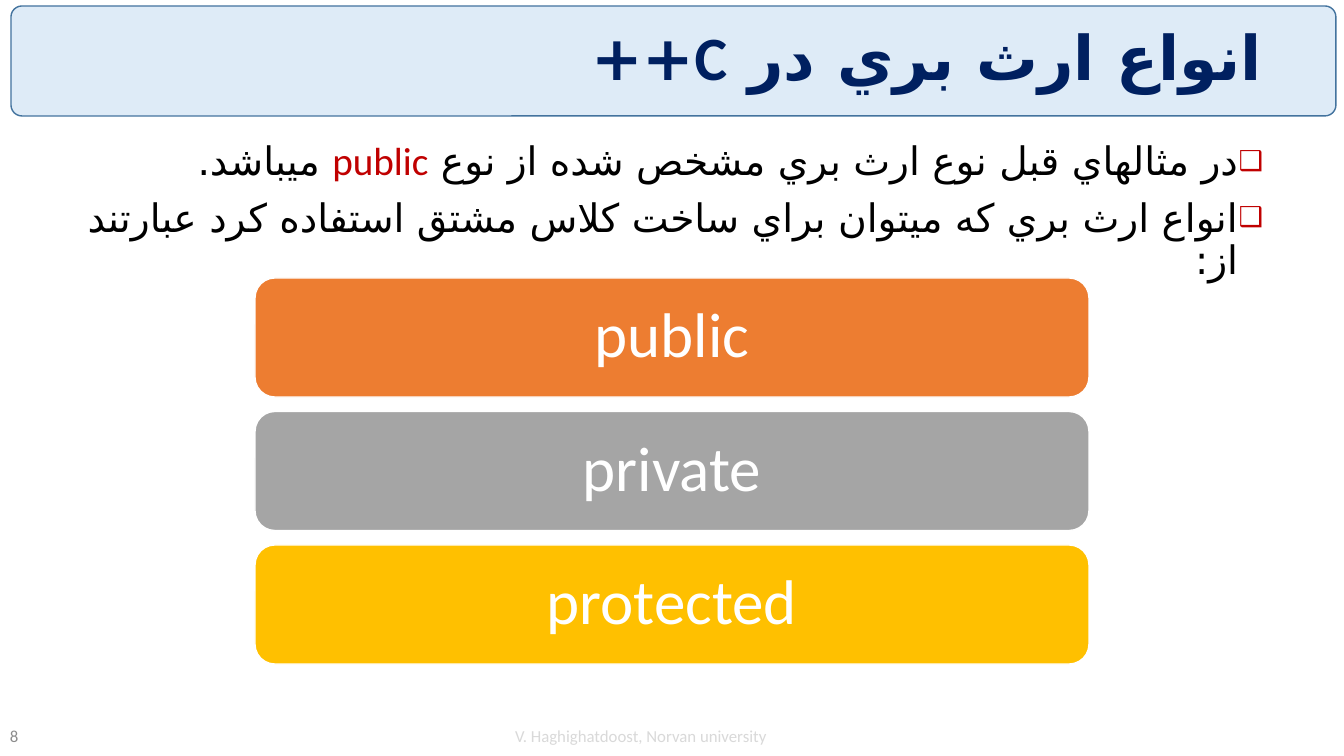
from lxml import etree
from pptx import Presentation
from pptx.dml.color import RGBColor
from pptx.enum.shapes import MSO_SHAPE
from pptx.enum.text import MSO_ANCHOR, MSO_AUTO_SIZE, PP_ALIGN
from pptx.oxml.ns import qn
from pptx.util import Pt

EMU_PER_PX = 914400 / 100.8
ROUNDED = MSO_SHAPE.ROUNDED_RECTANGLE
MIDDLE = MSO_ANCHOR.MIDDLE
TOP = MSO_ANCHOR.TOP
NO_AUTOFIT = MSO_AUTO_SIZE.NONE
LEFT, CENTER, RIGHT = PP_ALIGN.LEFT, PP_ALIGN.CENTER, PP_ALIGN.RIGHT
TITLE_ONLY = 5
FONT = "Calibri"
PERSIAN_FONT = "DejaVu Sans"
COLORS = {
    "banner": "DEEBF7",
    "banner_line": "43739E",
    "title": "002060",
    "body": "000000",
    "accent": "C00000",
    "white": "FFFFFF",
    "public": "ED7D31",
    "private": "A5A5A5",
    "protected": "FFC000",
    "footer": "D9D9D9",
    "number": "8C8C8C",
}
INTRO = [
    [
        ("در مثالهاي قبل نوع ارث بري مشخص شده از نوع ", "body"),
        ("public ", "accent"),
        ("ميباشد.", "body"),
    ],
    [("انواع ارث بري كه ميتوان براي ساخت كلاس مشتق استفاده كرد عبارتند از:", "body")],
]
ACCESS_KINDS = ["public", "private", "protected"]


def px(length):
    return round(length * EMU_PER_PX)


def rgb(name):
    return RGBColor.from_string(COLORS[name])


def format_run(run, size, color, bold=False):
    run.font.size = Pt(size)
    run.font.name = FONT
    run.font.bold = bold
    run.font.color.rgb = rgb(color)
    etree.SubElement(run.font._element, qn("a:cs"), typeface=PERSIAN_FONT)


def set_right_to_left(paragraph):
    paragraph.alignment = RIGHT
    paragraph.line_spacing = 0.9
    properties = paragraph._p.get_or_add_pPr()
    properties.set("rtl", "1")
    return properties


def add_bullet(properties):
    properties.set("marL", str(px(25)))
    properties.set("marR", "0")
    properties.set("indent", str(-px(25)))
    bullet_color = etree.SubElement(properties, qn("a:buClr"))
    etree.SubElement(bullet_color, qn("a:srgbClr"), val=COLORS["accent"])
    etree.SubElement(properties, qn("a:buSzPct"), val="70000")
    etree.SubElement(properties, qn("a:buFont"), typeface=FONT)
    etree.SubElement(properties, qn("a:buChar"), char="❑")


def add_rounded(slide, box, fill, line):
    rounded = slide.shapes.add_shape(ROUNDED, *map(px, box))
    rounded.shadow.inherit = False
    rounded.fill.solid()
    rounded.fill.fore_color.rgb = rgb(fill)
    rounded.line.color.rgb = rgb(line)
    rounded.line.width = Pt(1)
    return rounded


def add_header(slide, box):
    left, top, width, height = box
    banner = add_rounded(slide, box, "banner", "banner_line")
    banner.adjustments[0] = 0.1
    title = slide.shapes.title
    title._element.addprevious(banner._element)
    title.left, title.top = px(left + 13), px(top + 9)
    title.width, title.height = px(width - 76), px(height - 19)
    frame = title.text_frame
    frame.text = "انواع ارث بري در C++"
    frame.auto_size = NO_AUTOFIT
    frame.vertical_anchor = MIDDLE
    set_right_to_left(frame.paragraphs[0])
    format_run(frame.paragraphs[0].runs[0], 44, "title", bold=True)


def add_text_frame(slide, box, anchor):
    frame = slide.shapes.add_textbox(*map(px, box)).text_frame
    frame.word_wrap = True
    frame.vertical_anchor = anchor
    return frame


def add_intro(slide, box):
    frame = add_text_frame(slide, box, TOP)
    for index, pieces in enumerate(INTRO):
        paragraph = frame.add_paragraph() if index else frame.paragraphs[0]
        paragraph.space_before = Pt(10)
        add_bullet(set_right_to_left(paragraph))
        for text, color in pieces:
            run = paragraph.add_run()
            run.text = text
            format_run(run, 28, color)


def add_access_bars(slide, box):
    left, top, width, height = box
    bar_height = 119
    pitch = (height - bar_height) / (len(ACCESS_KINDS) - 1)
    for index, kind in enumerate(ACCESS_KINDS):
        bar_box = (left, top + index * pitch, width, bar_height)
        frame = add_rounded(slide, bar_box, kind, "white").text_frame
        frame.text = kind
        frame.vertical_anchor = MIDDLE
        label = frame.paragraphs[0]
        label.alignment = CENTER
        label.line_spacing = 0.9
        format_run(label.runs[0], 45, "white")


def add_footer_text(slide, box, text, color, alignment):
    frame = add_text_frame(slide, box, MIDDLE)
    frame.text = text
    frame.paragraphs[0].alignment = alignment
    format_run(frame.paragraphs[0].runs[0], 12, color)


def main():
    deck = Presentation()
    deck.slide_width, deck.slide_height = px(1344), px(756)
    slide = deck.slides.add_slide(deck.slide_layouts[TITLE_ONLY])
    add_header(slide, (11, 6, 1325, 110))
    add_intro(slide, (24, 137, 1249, 570))
    add_access_bars(slide, (255, 278, 834, 386))
    add_footer_text(
        slide, (364, 716, 554, 40), "V. Haghighatdoost, Norvan university", "footer", CENTER
    )
    add_footer_text(slide, (0, 716, 72, 40), "8", "number", LEFT)
    deck.save("out.pptx")


if __name__ == "__main__":
    main()
